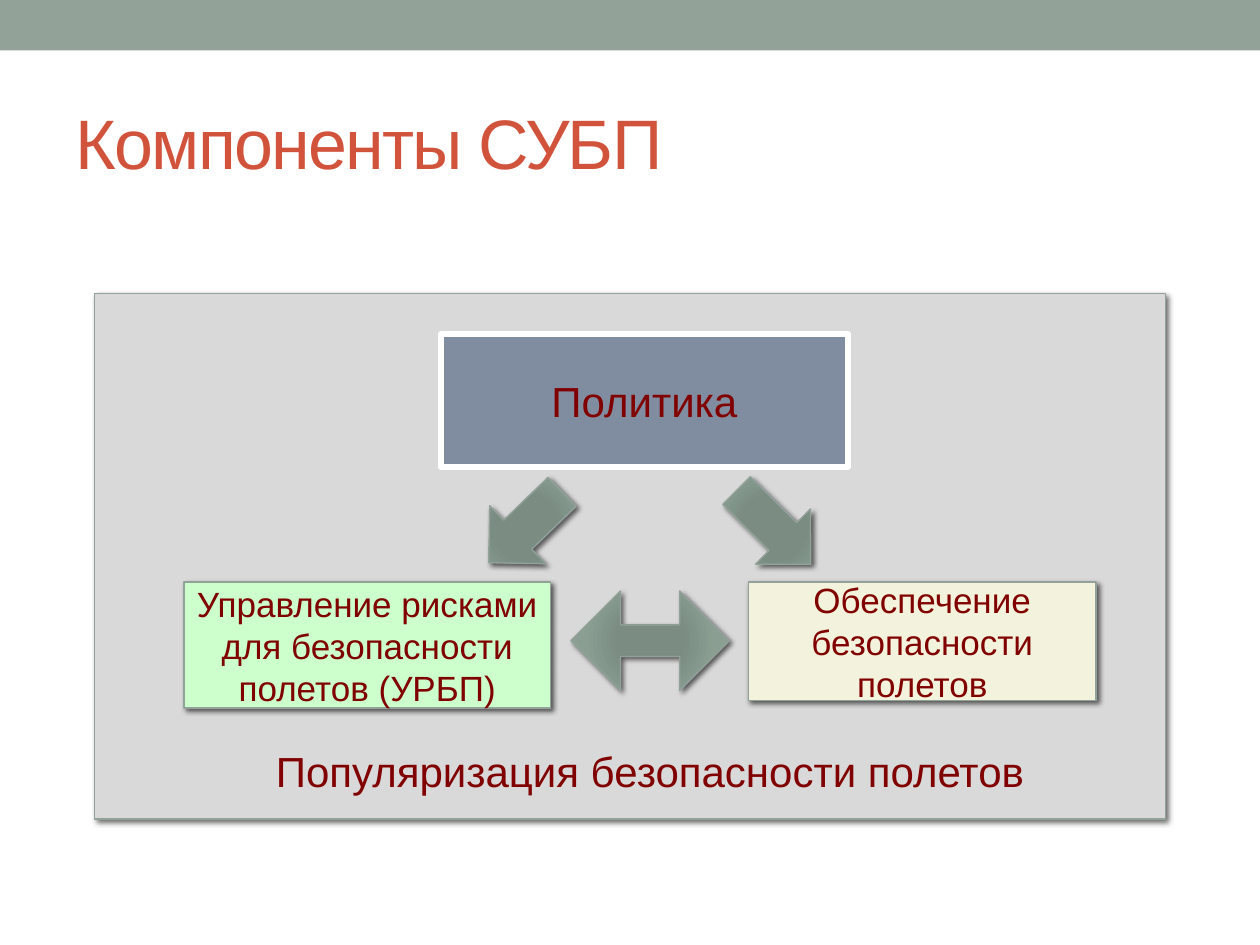
import pptx
import pptx.util
import pptx.dml.color
import pptx.enum.shapes
import pptx.enum.text
import pptx.oxml
import pptx.oxml.ns
from dataclasses import dataclass

Inches = pptx.util.Inches
Pt = pptx.util.Pt
RGB = pptx.dml.color.RGBColor.from_string
Kind = pptx.enum.shapes.MSO_SHAPE
Align = pptx.enum.text.PP_ALIGN
Anchor = pptx.enum.text.MSO_ANCHOR
qn = pptx.oxml.ns.qn
NS = pptx.oxml.ns.nsdecls("a")


@dataclass
class Theme:
    font: str = "Arial"
    sage: str = "93A299"
    title: str = "D2533C"
    text: str = "800000"
    panel: str = "D9D9D9"
    policy: str = "808DA0"
    risk: str = "CCFFCC"
    assure: str = "F3F2DC"
    white: str = "FFFFFF"
    shade: str = "000000"
    stops: tuple = ((0, "7B8E82"), (34, "7B8D83"), (70, "8A9E92"), (100, "93A299"))
    head: int = 40
    large: int = 24
    small: int = 20


theme = Theme()


def add_block(kind, box, fill=None, line=None, width=0.75, shadow=False):
    shape = slide.shapes.add_shape(kind, *(Inches(v) for v in box))
    shape.shadow.inherit = False
    if fill:
        shape.fill.solid()
        shape.fill.fore_color.rgb = RGB(fill)
    if line:
        shape.line.color.rgb = RGB(line)
        shape.line.width = Pt(width)
    else:
        shape.line.fill.background()
    if shadow:
        shape._element.spPr.find(qn("a:effectLst")).append(pptx.oxml.parse_xml(
            f'<a:outerShdw {NS} blurRad="{Pt(3)}" dist="{Pt(2)}" dir="2700000" rotWithShape="0">'
            f'<a:srgbClr val="{theme.shade}"><a:alpha val="60000"/></a:srgbClr></a:outerShdw>'))
    return shape


def set_text(shape, text, size, color, align):
    frame = shape.text_frame
    frame.text = text
    frame.word_wrap = True
    frame.auto_size = pptx.enum.text.MSO_AUTO_SIZE.NONE
    frame.vertical_anchor = Anchor.MIDDLE
    para = frame.paragraphs[0]
    para.alignment = align
    run = para.runs[0]
    run.font.name = theme.font
    run.font.size = Pt(size)
    run.font.color.rgb = RGB(color)
    return run


deck = pptx.Presentation()
deck.slide_width = Inches(10)
deck.slide_height = Inches(7.5)
slide = deck.slides.add_slide(deck.slide_layouts[5])

title = slide.shapes.title
title.left, title.top = Inches(0.5), Inches(0.58)
title.width, title.height = Inches(9), Inches(1.08)
run = set_text(title, "Компоненты СУБП", theme.head, theme.title, Align.LEFT)
run.font._element.set("spc", "-100")

add_block(Kind.RECTANGLE, (0, 0, 10, 0.4), theme.sage)
add_block(Kind.RECTANGLE, (0.75, 2.33, 8.5, 4.17), theme.panel, theme.sage, shadow=True)

blocks = [
    ("Обеспечение безопасности полетов", (5.94, 4.62, 2.76, 0.94),
     theme.assure, theme.sage, 0.75, True, theme.small),
    ("Политика", (3.5, 2.65, 3.23, 1.06),
     theme.policy, theme.white, 3.5, False, theme.large),
    ("Управление рисками для безопасности полетов (УРБП)", (1.46, 4.62, 2.91, 1),
     theme.risk, theme.sage, 0.75, True, theme.small),
    ("Популяризация безопасности полетов", (1.46, 5.88, 7.4, 0.47),
     theme.panel, None, 0, False, theme.large),
]
for text, box, fill, line, width, shadow, size in blocks:
    block = add_block(Kind.RECTANGLE, box, fill, line, width, shadow)
    set_text(block, text, size, theme.text, Align.CENTER)

arrows = [
    (Kind.LEFT_RIGHT_ARROW, (4.53, 4.69, 1.26, 0.79), 0, (0.317, 0.5)),
    (Kind.DOWN_ARROW, (3.85, 3.78, 0.64, 0.81), 46, ()),
    (Kind.DOWN_ARROW, (5.83, 3.77, 0.62, 0.83), 314.8, ()),
]
stops = "".join(f'<a:gs pos="{pos * 1000}"><a:srgbClr val="{color}"/></a:gs>'
                for pos, color in theme.stops)
for kind, box, turn, adjust in arrows:
    arrow = add_block(kind, box, line=theme.sage, shadow=True)
    arrow.rotation = turn
    for i, value in enumerate(adjust):
        arrow.adjustments[i] = value
    arrow.fill.gradient()
    props = arrow._element.spPr
    props.replace(props.find(qn("a:gradFill")), pptx.oxml.parse_xml(
        f'<a:gradFill {NS} rotWithShape="1"><a:gsLst>{stops}</a:gsLst><a:path path="circle">'
        '<a:fillToRect l="100000" t="100000" r="100000" b="100000"/></a:path></a:gradFill>'))

deck.save("out.pptx")
